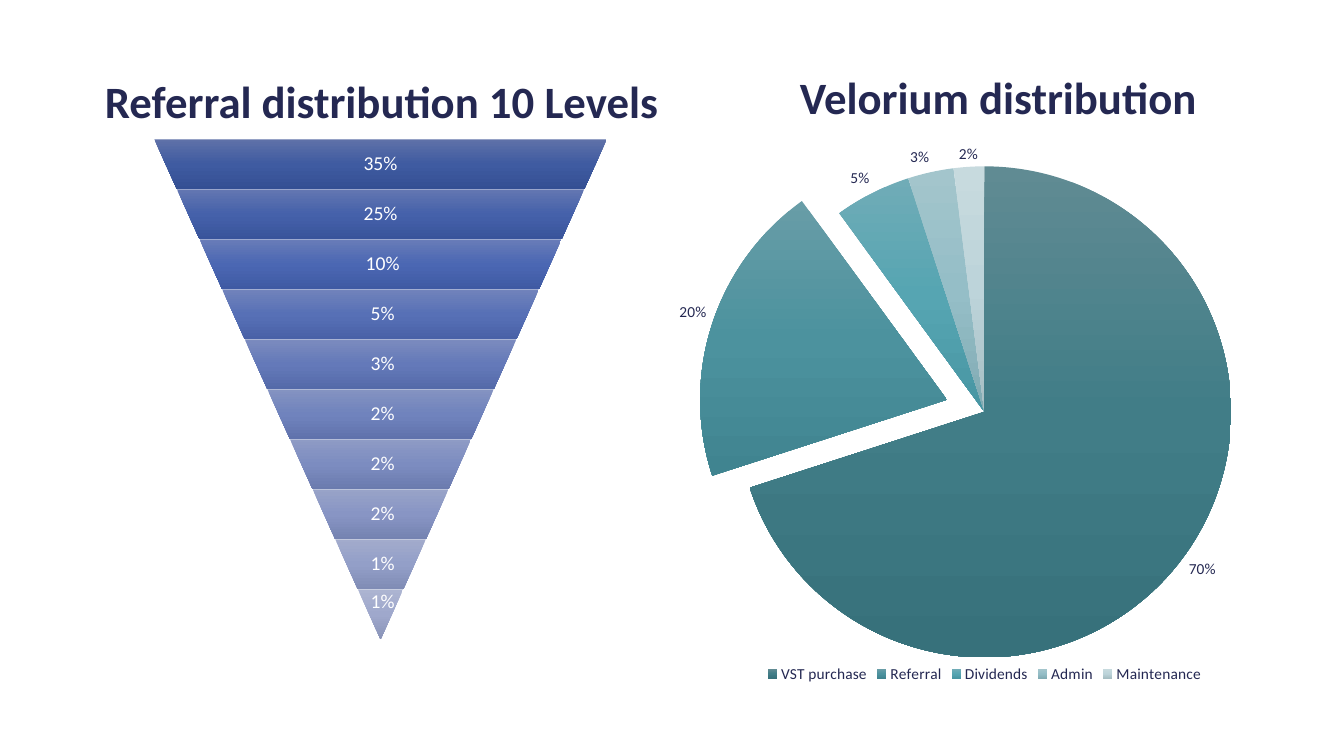
"""Build a slide with a referral funnel and a Velorium distribution pie."""
from typing import NamedTuple

from lxml.etree import SubElement
from pptx import Presentation
from pptx.chart.data import CategoryChartData
from pptx.dml.color import RGBColor
from pptx.dml.fill import FillFormat
from pptx.enum.chart import XL_CHART_TYPE, XL_LABEL_POSITION, XL_LEGEND_POSITION
from pptx.enum.shapes import MSO_SHAPE
from pptx.enum.text import MSO_ANCHOR, MSO_AUTO_SIZE, PP_ALIGN
from pptx.oxml.ns import qn
from pptx.slide import Slide
from pptx.text.text import Font, TextFrame
from pptx.util import Cm, Pt

NAVY = "242852"
WHITE = "FFFFFF"
BAND_LEFT, BAND_TOP, BAND_WIDTH = 3.89, 3.51, 11.4
BAND_STEP, BAND_HEIGHT, BAND_INSET = 1.26, 1.26, 0.57
LABEL_SHARE = 0.65


class Level(NamedTuple):
    label: str
    colours: tuple[str, str, str]
    label_share: float = LABEL_SHARE
    label_rise: float = 0


class Slice(NamedTuple):
    name: str
    value: int
    colours: tuple[str, str, str]
    explosion: int = 0


LEVELS = [
    Level("35%", ("5F71A8", "3F5BA1", "344F93")),
    Level("25%", ("6376B1", "4561AA", "39549B")),
    Level(" 10%", ("687CB8", "4B67B3", "3F5AA3")),
    Level(" 5%", ("7183BB", "5770B6", "4961A7")),
    Level(" 3%", ("7B8BBE", "6479B9", "546AA9")),
    Level(" 2%", ("8493C1", "7083BD", "6072AC")),
    Level(" 2%", ("8E9BC5", "7C8CC0", "6B7BAE")),
    Level(" 2%", ("98A3C8", "8895C4", "7583B1")),
    Level(" 1%", ("A2ABCC", "939FC8", "808CB5")),
    Level(" 1%", ("ACB4D1", "9FA8CC", "8A94B8"), 1, 0.3),
]
SLICES = [
    Slice("VST purchase", 70, ("608B93", "417D87", "37717B")),
    Slice("Referral", 20, ("689DA7", "4C929E", "408490"), 16),
    Slice("Dividends", 5, ("70ACB7", "56A5B2", "4896A3")),
    Slice("Admin", 3, ("A3C5CC", "95BEC7", "81ABB3")),
    Slice("Maintenance", 2, ("C7DADE", "BDD4DA", "A6BEC3")),
]


def colour(code: str) -> RGBColor:
    """Turn a hex string into a colour."""
    return RGBColor.from_string(code)


def style_font(font: Font, size: float, code: str, bold: bool = False) -> None:
    """Set typeface, size, colour and weight."""
    font.name = "Calibri"
    font.size = Pt(size)
    font.bold = bold
    font.color.rgb = colour(code)


def paint_gradient(fill: FillFormat, owner, codes: tuple[str, str, str]) -> None:
    """Give the newest fill inside owner a vertical gradient of even stops."""
    fill.gradient()
    fill.gradient_angle = 270
    gradient = list(owner.iter(qn("a:gradFill")))[-1]
    gradient.set("rotWithShape", "0")
    stops = gradient.find(qn("a:gsLst"))
    for stop in list(stops):
        stops.remove(stop)
    for index, code in enumerate(codes):
        stop = SubElement(stops, qn("a:gs"), pos=str(index * 50000))
        SubElement(stop, qn("a:srgbClr"), val=code)


def write_heading(frame: TextFrame, text: str) -> None:
    """Write a bold heading at the top left of its frame."""
    frame.word_wrap = True
    frame.auto_size = MSO_AUTO_SIZE.NONE
    frame.vertical_anchor = MSO_ANCHOR.TOP
    para = frame.paragraphs[0]
    para.alignment = PP_ALIGN.LEFT
    span = para.add_run()
    span.text = text
    style_font(span.font, 32, NAVY, True)


def add_level(page: Slide, index: int, level: Level) -> None:
    """Draw one funnel band with its label."""
    top = BAND_TOP + index * BAND_STEP
    left = BAND_LEFT + index * BAND_INSET
    width = BAND_WIDTH - 2 * index * BAND_INSET
    band = page.shapes.add_shape(
        MSO_SHAPE.TRAPEZOID, Cm(left), Cm(top), Cm(width), Cm(BAND_HEIGHT))
    band.rotation = 180
    band.adjustments[0] = BAND_INSET / min(width, BAND_HEIGHT)
    band.shadow.inherit = False
    band.line.fill.background()
    paint_gradient(band.fill, band.element, level.colours)

    label_width = width * level.label_share
    box = page.shapes.add_textbox(
        Cm(left + (width - label_width) / 2), Cm(top - level.label_rise),
        Cm(label_width), Cm(BAND_HEIGHT))
    frame = box.text_frame
    frame.word_wrap = True
    frame.vertical_anchor = MSO_ANCHOR.MIDDLE
    frame.margin_left = frame.margin_right = Cm(0.05)
    frame.margin_top = frame.margin_bottom = Cm(0.05)
    para = frame.paragraphs[0]
    para.alignment = PP_ALIGN.CENTER
    para.line_spacing = 0.9
    span = para.add_run()
    span.text = level.label
    style_font(span.font, 14, WHITE)


def add_pie(page: Slide) -> None:
    """Draw the distribution pie with its labels and legend."""
    data = CategoryChartData()
    data.categories = [piece.name for piece in SLICES]
    data.add_series("Series 1", [piece.value for piece in SLICES])
    chart = page.shapes.add_chart(
        XL_CHART_TYPE.PIE, Cm(15.77), Cm(3.58), Cm(18.08), Cm(13.74), data).chart
    chart.has_title = False
    style_font(chart.font, 11, NAVY)
    chart.has_legend = True
    chart.legend.position = XL_LEGEND_POSITION.BOTTOM
    chart.legend.include_in_layout = False
    style_font(chart.legend.font, 11, NAVY)

    plot = chart.plots[0]
    plot.vary_by_categories = True
    plot.has_data_labels = True
    labels = plot.data_labels
    labels.show_value = False
    labels.show_percentage = True
    labels.number_format = "0%"
    labels.number_format_is_linked = False
    labels.position = XL_LABEL_POSITION.OUTSIDE_END
    style_font(labels.font, 11, NAVY)

    for index, piece in enumerate(SLICES):
        look = plot.series[0].points[index].format
        paint_gradient(look.fill, chart.element, piece.colours)
        look.line.fill.background()
        if piece.explosion:
            point = list(chart.element.iter(qn("c:dPt")))[-1]
            burst = SubElement(point, qn("c:explosion"), val=str(piece.explosion))
            point.find(qn("c:spPr")).addprevious(burst)

    area = next(chart.element.iter(qn("c:plotArea")))
    for old in area.findall(qn("c:layout")):
        area.remove(old)
    layout = SubElement(area, qn("c:layout"))
    area.insert(0, layout)
    manual = SubElement(layout, qn("c:manualLayout"))
    settings = {"layoutTarget": "inner", "xMode": "edge", "yMode": "edge",
                "x": "0.156", "y": "0.04", "w": "0.688", "h": "0.905"}
    for name, value in settings.items():
        SubElement(manual, qn(f"c:{name}"), val=value)


def main() -> None:
    """Assemble and save the deck."""
    deck = Presentation()
    deck.slide_width, deck.slide_height = Cm(33.87), Cm(19.05)
    page = deck.slides.add_slide(deck.slide_layouts[5])
    add_pie(page)
    pie_heading = page.shapes.add_textbox(Cm(19.91), Cm(1.63), Cm(10.95), Cm(1.63))
    write_heading(pie_heading.text_frame, "Velorium distribution")
    for index, level in enumerate(LEVELS):
        add_level(page, index, level)
    title = page.shapes.title
    title.left, title.top, title.width, title.height = Cm(2.39), Cm(1.73), Cm(15.49), Cm(1.63)
    write_heading(title.text_frame, "Referral distribution 10 Levels")
    deck.save("out.pptx")


if __name__ == "__main__":
    main()
